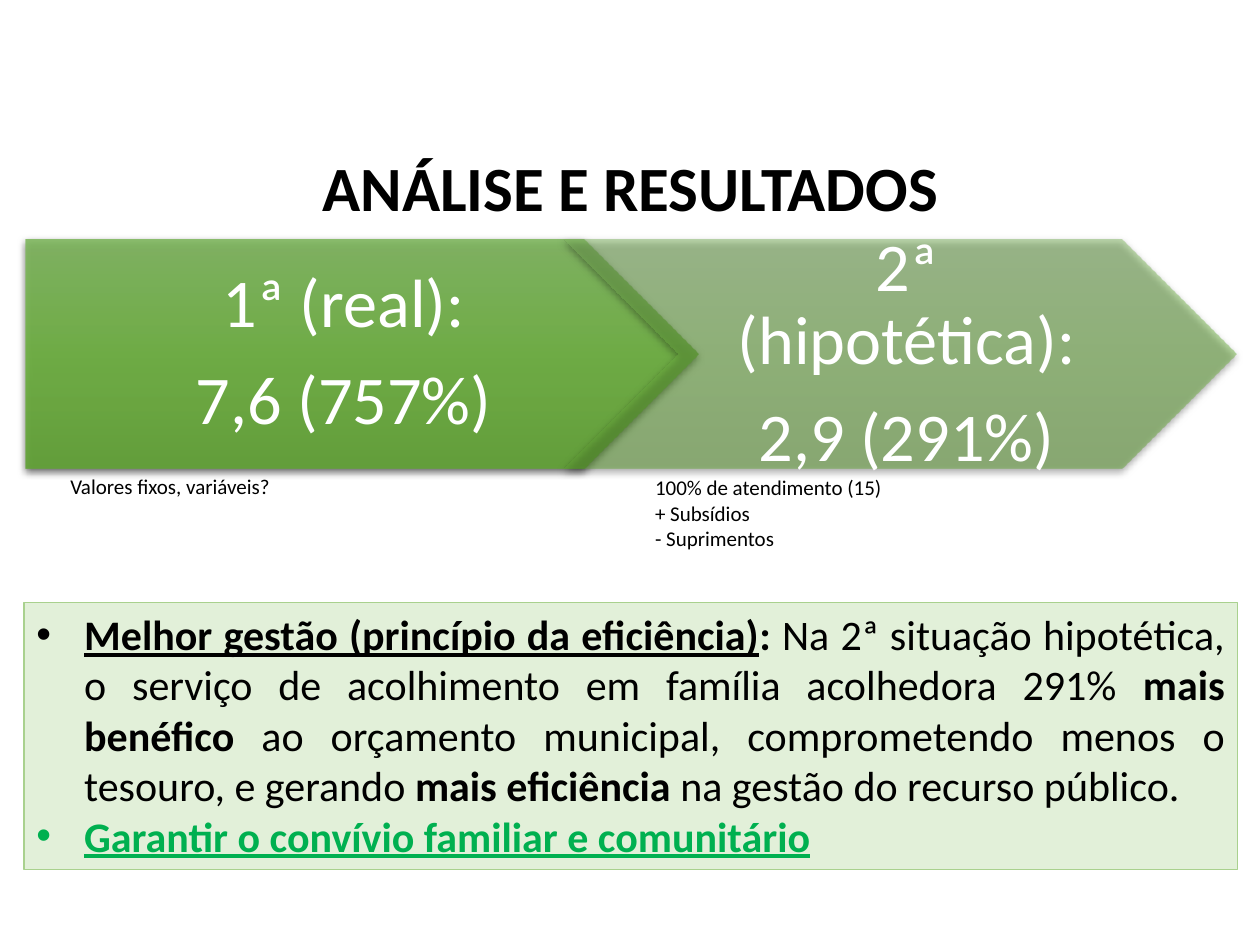
import pptx
import pptx.util
import pptx.oxml
import pptx.oxml.ns
import pptx.dml.color
import pptx.enum.shapes
import pptx.enum.text
from dataclasses import dataclass

Inches, Pt = pptx.util.Inches, pptx.util.Pt
SHAPE = pptx.enum.shapes.MSO_SHAPE
ALIGN = pptx.enum.text.PP_ALIGN
ANCHOR = pptx.enum.text.MSO_ANCHOR
qn, nsdecls = pptx.oxml.ns.qn, pptx.oxml.ns.nsdecls


@dataclass(frozen=True)
class Theme:
    font: str = "Calibri"
    text: str = "000000"
    light: str = "FFFFFF"
    accent: str = "00B050"
    panel: str = "E2F0D9"
    panel_line: str = "A9D18E"
    gradient: tuple = ((0, "81B861"), (50, "6FB242"), (100, "62A336"))
    title_size: int = 36
    arrow_size: int = 39
    body_size: int = 24
    note_size: int = 12


T = Theme()


def rgb(value):
    return pptx.dml.color.RGBColor.from_string(value)


def add_run(p, text, size, color=T.text, bold=False, underline=False):
    r = p.add_run()
    r.text = text
    f = r.font
    f.name, f.size, f.bold, f.underline = T.font, Pt(size), bold, underline
    f.color.rgb = rgb(color)


def paragraphs(tf, count):
    return [tf.paragraphs[0]] + [tf.add_paragraph() for _ in range(count - 1)]


def add_text(s, box, lines, size, color=T.text, bold=False, align=ALIGN.LEFT,
             anchor=ANCHOR.TOP, wrap=True, spacing=None, after=0, insets=None):
    tf = s.shapes.add_textbox(*map(Inches, box)).text_frame
    tf.word_wrap, tf.vertical_anchor = wrap, anchor
    if insets:
        (tf.margin_left, tf.margin_top,
         tf.margin_right, tf.margin_bottom) = map(Inches, insets)
    for p, line in zip(paragraphs(tf, len(lines)), lines):
        p.alignment, p.line_spacing, p.space_after = align, spacing, Pt(after)
        add_run(p, line, size, color, bold)


def style_arrow(sp, alpha):
    """Translucent vertical gradient with a soft shadow below."""
    sp.line.fill.background()
    sp.fill.gradient()
    sp.fill.gradient_angle = 270
    stops = sp._element.spPr.find(qn("a:gradFill")).find(qn("a:gsLst"))
    for gs in list(stops):
        stops.remove(gs)
    for pos, color in T.gradient:
        stops.append(pptx.oxml.parse_xml(
            f'<a:gs {nsdecls("a")} pos="{pos * 1000}"><a:srgbClr val="{color}">'
            f'<a:alpha val="{alpha * 1000}"/></a:srgbClr></a:gs>'))
    sp.shadow.inherit = False
    sp._element.spPr.find(qn("a:effectLst")).append(pptx.oxml.parse_xml(
        f'<a:outerShdw {nsdecls("a")} blurRad="{Pt(4.5)}" dist="{Pt(1.5)}" '
        'dir="5400000" algn="ctr" rotWithShape="0"><a:srgbClr val="000000">'
        '<a:alpha val="63000"/></a:srgbClr></a:outerShdw>'))


def add_arrow(s, box, kind, alpha, lines, text_left, text_right, inset):
    x, y, w, h = box
    style_arrow(s.shapes.add_shape(kind, *map(Inches, box)), alpha)
    add_text(s, (x + text_left, y, w - text_left - text_right, h), lines,
             T.arrow_size, T.light, align=ALIGN.CENTER, anchor=ANCHOR.MIDDLE,
             spacing=0.9, after=13, insets=(inset, 0.11, 0.06, 0.11))


def add_scenarios(s, box):
    """Two overlapping arrows, each with a note below."""
    x, y, w, h = box
    arrow_w, half = 5.34, h / 2
    add_arrow(s, (x, y, arrow_w, h), SHAPE.PENTAGON, 90,
              ["1ª (real):", "7,6 (757%)"], 0, half / 2, 0.23)
    add_arrow(s, (x + w - arrow_w, y, arrow_w, h), SHAPE.CHEVRON, 50,
              ["2ª (hipotética):", "2,9 (291%)"], half, half, 0.17)
    add_text(s, (x + 4.9, y + h, 2.02, 0.71),
             ["100% de atendimento (15)", "+ Subsídios", "- Suprimentos"],
             T.note_size, wrap=False)
    add_text(s, (x + 0.26, y + h - 0.01, 1.8, 0.3),
             ["Valores fixos, variáveis?"], T.note_size, wrap=False)


def add_conclusions(s, box):
    """Bulleted panel; each run is (text, style)."""
    strong = dict(bold=True)
    link = dict(bold=True, underline=True)
    items = [
        [("Melhor gestão (princípio da eficiência)", link),
         (": ", strong),
         ("Na 2ª situação hipotética, o serviço de acolhimento em família "
          "acolhedora 291% ", {}),
         ("mais benéfico ", strong),
         ("ao orçamento municipal, comprometendo menos o tesouro, e gerando ", {}),
         ("mais eficiência ", strong),
         ("na gestão do recurso público.", {})],
        [("Garantir o convívio familiar e comunitário",
          dict(link, color=T.accent))],
    ]
    sp = s.shapes.add_shape(SHAPE.RECTANGLE, *map(Inches, box))
    sp.shadow.inherit = False
    sp.fill.solid()
    sp.fill.fore_color.rgb = rgb(T.panel)
    sp.line.color.rgb = rgb(T.panel_line)
    sp.line.width = Pt(0.75)
    tf = sp.text_frame
    tf.word_wrap, tf.vertical_anchor = True, ANCHOR.TOP
    for p, runs in zip(paragraphs(tf, len(items)), items):
        p.alignment = ALIGN.JUSTIFY
        pPr = p._p.get_or_add_pPr()
        pPr.set("marL", str(Inches(0.38)))
        pPr.set("indent", str(-Inches(0.38)))
        pPr.append(pptx.oxml.parse_xml(
            f'<a:buFont {nsdecls("a")} typeface="Arial"/>'))
        pPr.append(pptx.oxml.parse_xml(f'<a:buChar {nsdecls("a")} char="•"/>'))
        for text, style in runs:
            add_run(p, text, T.body_size, **style)


def main():
    prs = pptx.Presentation()
    prs.slide_width, prs.slide_height = Inches(10), Inches(7.5)
    s = prs.slides.add_slide(prs.slide_layouts[6])
    # Title
    add_text(s, (0.19, 1.21, 9.63, 0.62), ["ANÁLISE E RESULTADOS"],
             T.title_size, bold=True, align=ALIGN.CENTER,
             anchor=ANCHOR.MIDDLE, spacing=0.9)
    # Scenario arrows and notes
    add_scenarios(s, (0.2, 1.9, 9.61, 1.82))
    # Conclusions
    add_conclusions(s, (0.19, 4.78, 9.63, 2.12))
    prs.save("out.pptx")


if __name__ == "__main__":
    main()
